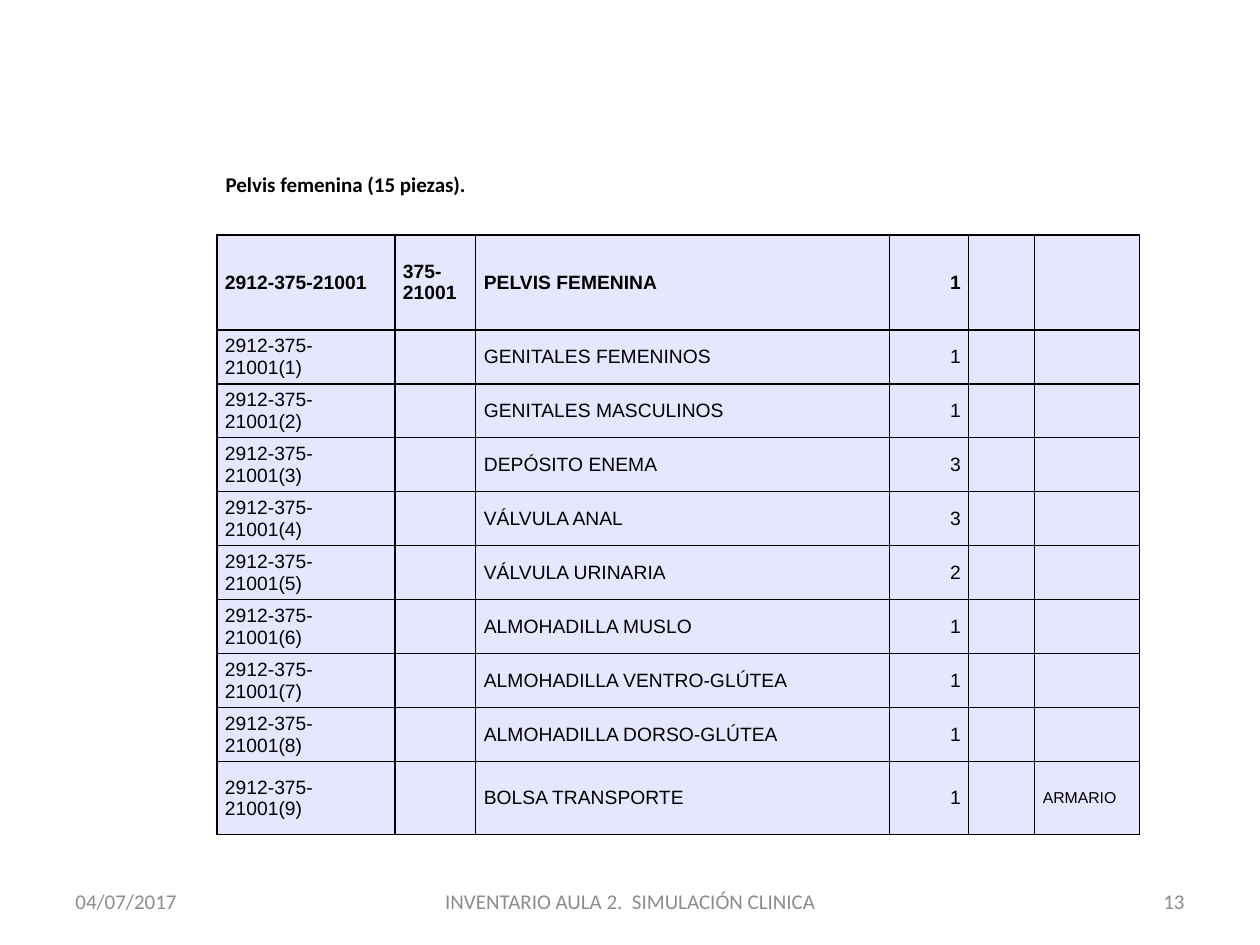
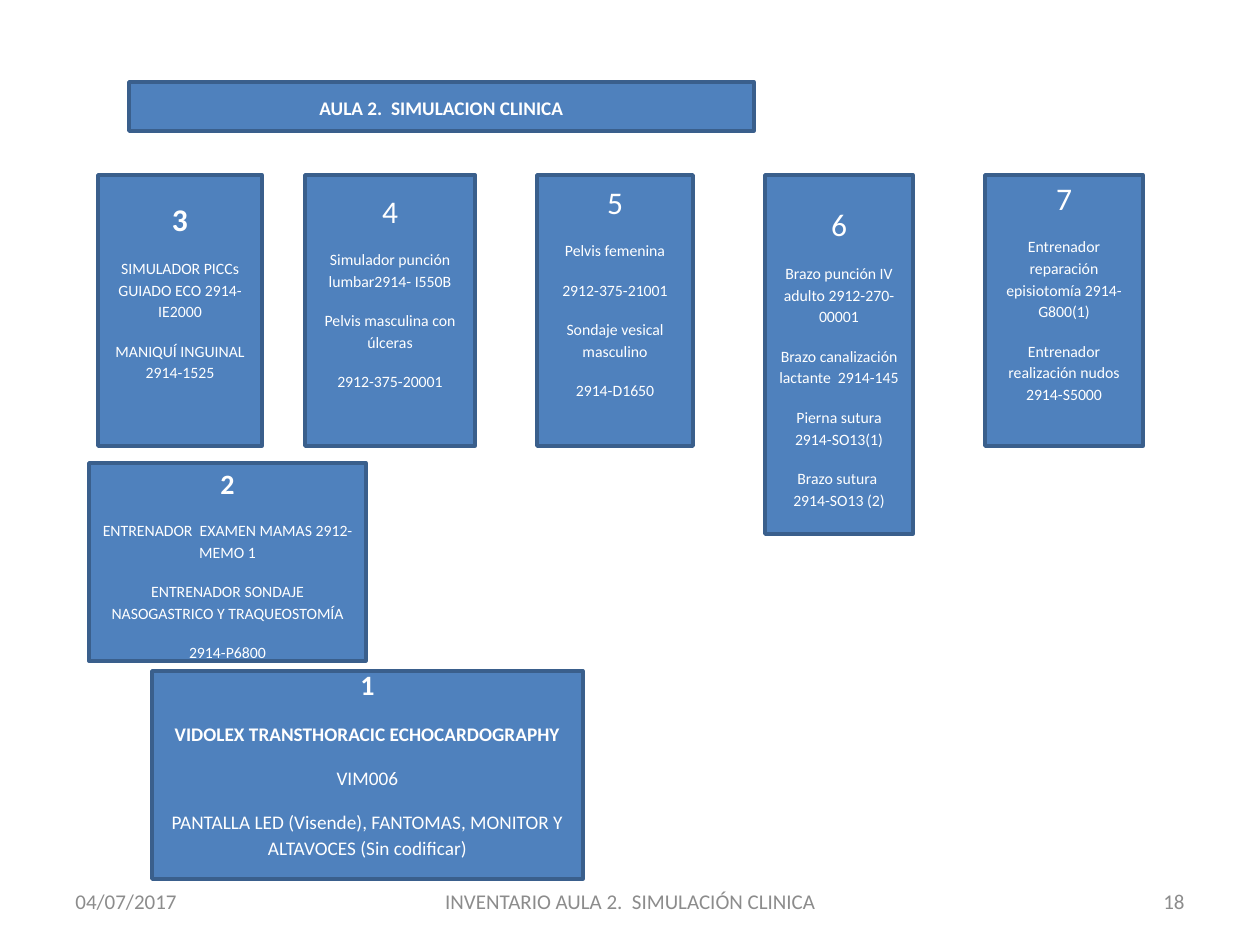
from lxml import etree
from pptx import Presentation
from pptx.dml.color import RGBColor
from pptx.enum.shapes import MSO_SHAPE
from pptx.enum.text import MSO_ANCHOR, MSO_AUTO_SIZE, PP_ALIGN
from pptx.oxml.ns import qn
from pptx.util import Pt

RECTANGLE = MSO_SHAPE.RECTANGLE
TOP, MIDDLE = MSO_ANCHOR.TOP, MSO_ANCHOR.MIDDLE
LEFT, CENTER, RIGHT = PP_ALIGN.LEFT, PP_ALIGN.CENTER, PP_ALIGN.RIGHT
NO_AUTOFIT = MSO_AUTO_SIZE.NONE

SCALE = 914400 / 126
SLIDE_SIZE = (1260, 945)
TITLE_ONLY = 5
COLORS = {
    "black": "000000", "white": "FFFFFF", "footer": "8C8C8C",
    "cell": "E6E6FF", "box": "4F81BD", "outline": "3A5F8C",
}

DATE = "04/07/2017"
FOOTER = "INVENTARIO AULA 2.  SIMULACIÓN CLINICA"
FOOTER_TOP, FOOTER_HEIGHT = 876, 50

INVENTORY_TITLE = "Pelvis femenina (15 piezas)."
CODE = "2912-375-21001"
PIECES = [
    ("GENITALES FEMENINOS", 1),
    ("GENITALES MASCULINOS", 1),
    ("DEPÓSITO ENEMA", 3),
    ("VÁLVULA ANAL", 3),
    ("VÁLVULA URINARIA", 2),
    ("ALMOHADILLA MUSLO", 1),
    ("ALMOHADILLA VENTRO-GLÚTEA", 1),
    ("ALMOHADILLA DORSO-GLÚTEA", 1),
    ("BOLSA TRANSPORTE", 1),
]
LAST_LOCATION = "ARMARIO"
TABLE_LEFT, TABLE_TOP = 217, 235
COLUMN_WIDTHS = [178, 81, 414, 79, 66, 105]
ROW_HEIGHTS = [95] + [54] * 8 + [73]
QUANTITY_COLUMN, LOCATION_COLUMN = 3, 5

ROOM_TITLE = "AULA 2.  SIMULACION CLINICA"
SHELF_TOP = 175
STATIONS = [
    {"number": "3", "place": (98, SHELF_TOP, 164, 271), "bold": True, "space_below": 44,
     "lines": ["SIMULADOR PICCs GUIADO ECO 2914-IE2000", "MANIQUÍ INGUINAL 2914-1525"]},
    {"number": "4", "place": (305, SHELF_TOP, 170, 271), "space_below": 44,
     "lines": ["Simulador punción lumbar2914- I550B", "Pelvis masculina con úlceras",
               "2912-375-20001"]},
    {"number": "5", "place": (537, SHELF_TOP, 156, 271), "space_below": 44,
     "lines": ["Pelvis femenina", "2912-375-21001", "Sondaje vesical masculino",
               "2914-D1650"]},
    {"number": "7", "place": (985, SHELF_TOP, 158, 271), "space_below": 44,
     "lines": ["Entrenador reparación episiotomía 2914-G800(1)",
               "Entrenador realización nudos 2914-S5000"]},
    {"number": "6", "place": (765, SHELF_TOP, 148, 359),
     "lines": ["Brazo punción IV adulto 2912-270-00001",
               "Brazo canalización lactante  2914-145",
               "Pierna sutura 2914-SO13(1)", "Brazo sutura  2914-SO13 (2)"]},
    {"number": "1", "place": (152, 671, 431, 208), "bold": True, "space_below": 28,
     "number_size": 16, "line_size": 11, "bold_lines": 1,
     "lines": ["VIDOLEX TRANSTHORACIC ECHOCARDOGRAPHY", "VIM006",
               "PANTALLA LED (Visende), FANTOMAS, MONITOR Y ALTAVOCES (Sin codificar)"]},
    {"number": "2", "place": (89, 463, 277, 198), "bold": True, "number_size": 16,
     "lines": ["ENTRENADOR  EXAMEN MAMAS 2912-MEMO 1",
               "ENTRENADOR SONDAJE NASOGASTRICO Y TRAQUEOSTOMÍA", "2914-P6800"]},
]


def px(value):
    return round(value * SCALE)


def rgb(name):
    return RGBColor.from_string(COLORS[name])


def write(paragraph, text, size=12, color="black", bold=False, font="Calibri",
          align=LEFT, line_spacing=1.0, space_after=0):
    paragraph.alignment = align
    paragraph.line_spacing = line_spacing
    paragraph.space_after = Pt(space_after)
    run = paragraph.add_run()
    run.text = text
    run.font.name = font
    run.font.size = Pt(size)
    run.font.bold = bold
    run.font.color.rgb = rgb(color)


def write_box(paragraph, text, **style):
    write(paragraph, text, color="white", align=CENTER, line_spacing=1.15,
          space_after=10, **style)


def place(shape, left, top, width, height):
    shape.left, shape.top = px(left), px(top)
    shape.width, shape.height = px(width), px(height)


def prepare_frame(shape, anchor=MIDDLE, space_below=0):
    frame = shape.text_frame
    frame.word_wrap = True
    frame.auto_size = NO_AUTOFIT
    frame.vertical_anchor = anchor
    frame.margin_left = frame.margin_right = px(12.6)
    frame.margin_top = px(6.3)
    frame.margin_bottom = px(6.3 + space_below)
    return frame


def paint_box(shape):
    shape.fill.solid()
    shape.fill.fore_color.rgb = rgb("box")
    shape.line.color.rgb = rgb("outline")
    shape.line.width = Pt(2)


def add_footer(slide, number):
    parts = [(63, 294, DATE, LEFT), (431, 399, FOOTER, CENTER), (903, 294, number, RIGHT)]
    for left, width, text, align in parts:
        shape = slide.shapes.add_textbox(px(left), px(FOOTER_TOP), px(width), px(FOOTER_HEIGHT))
        write(prepare_frame(shape).paragraphs[0], text, color="footer", align=align)


def add_slide(presentation, number):
    slide = presentation.slides.add_slide(presentation.slide_layouts[TITLE_ONLY])
    add_footer(slide, number)
    return slide


def format_cell(cell):
    cell.vertical_anchor = MIDDLE
    cell.margin_left = cell.margin_right = px(8)
    cell.margin_top = cell.margin_bottom = px(4)
    properties = cell._tc.get_or_add_tcPr()
    for side in ("lnL", "lnR", "lnT", "lnB"):
        line = etree.SubElement(properties, qn(f"a:{side}"), w=str(Pt(0.75)))
        fill = etree.SubElement(line, qn("a:solidFill"))
        etree.SubElement(fill, qn("a:srgbClr"), val=COLORS["black"])
    cell.fill.solid()
    cell.fill.fore_color.rgb = rgb("cell")


def inventory_rows():
    rows = [[CODE, CODE[5:], "PELVIS FEMENINA", "1", "", ""]]
    for number, (piece, quantity) in enumerate(PIECES, 1):
        rows.append([f"{CODE}({number})", "", piece, str(quantity), "", ""])
    rows[-1][LOCATION_COLUMN] = LAST_LOCATION
    return rows


def add_inventory(slide):
    rows = inventory_rows()
    table = slide.shapes.add_table(
        len(rows), len(COLUMN_WIDTHS), px(TABLE_LEFT), px(TABLE_TOP),
        px(sum(COLUMN_WIDTHS)), px(sum(ROW_HEIGHTS))).table
    table.first_row = table.horz_banding = False
    for column, width in zip(table.columns, COLUMN_WIDTHS):
        column.width = px(width)
    for row_index, texts in enumerate(rows):
        table.rows[row_index].height = px(ROW_HEIGHTS[row_index])
        for column_index, text in enumerate(texts):
            cell = table.cell(row_index, column_index)
            format_cell(cell)
            if text:
                write(cell.text_frame.paragraphs[0], text, font="Arial",
                      size=9 if column_index == LOCATION_COLUMN else 11,
                      bold=row_index == 0,
                      align=RIGHT if column_index == QUANTITY_COLUMN else LEFT)


def add_station(slide, station):
    shape = slide.shapes.add_shape(RECTANGLE, *map(px, station["place"]))
    shape.shadow.inherit = False
    paint_box(shape)
    frame = prepare_frame(shape, space_below=station.get("space_below", 0))
    write_box(frame.paragraphs[0], station["number"],
              size=station.get("number_size", 18), bold=station.get("bold", False))
    for index, line in enumerate(station["lines"]):
        write_box(frame.add_paragraph(), line, size=station.get("line_size", 9),
                  bold=index < station.get("bold_lines", 0))


def build_inventory_slide(presentation):
    slide = add_slide(presentation, "13")
    title = slide.shapes.title
    place(title, 213, 165, 903, 38)
    write(prepare_frame(title, anchor=TOP).paragraphs[0], INVENTORY_TITLE, bold=True)
    add_inventory(slide)


def build_room_slide(presentation):
    slide = add_slide(presentation, "18")
    title = slide.shapes.title
    place(title, 129, 82, 625, 49)
    paint_box(title)
    write_box(prepare_frame(title).paragraphs[0], ROOM_TITLE, size=11, bold=True)
    for station in STATIONS:
        add_station(slide, station)


def main():
    """Build the inventory table slide and the room map slide."""
    presentation = Presentation()
    presentation.slide_width, presentation.slide_height = map(px, SLIDE_SIZE)
    build_inventory_slide(presentation)
    build_room_slide(presentation)
    presentation.save("out.pptx")


if __name__ == "__main__":
    main()
